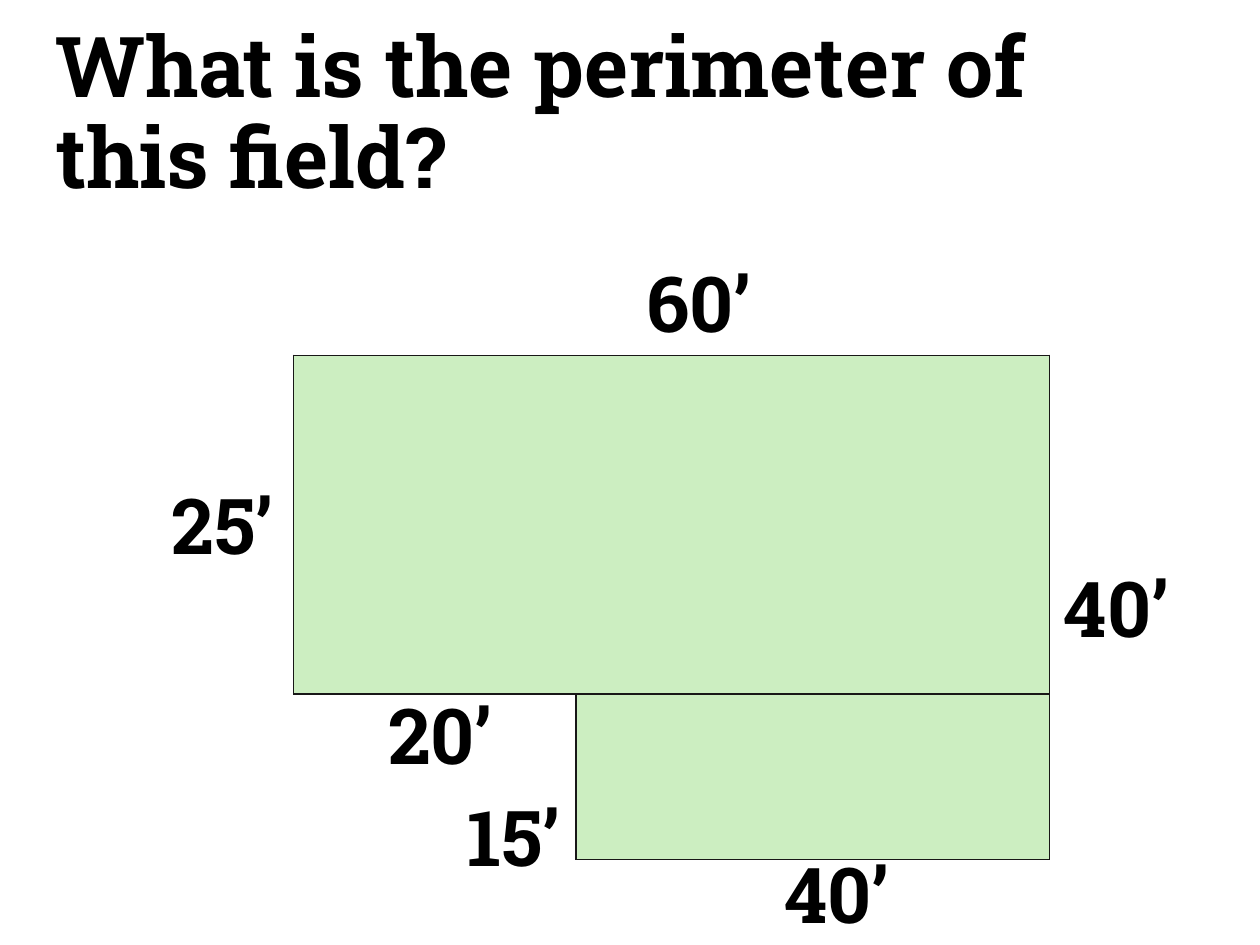
from dataclasses import dataclass

from lxml.etree import SubElement
from pptx import Presentation
from pptx.dml.color import RGBColor as RGB
from pptx.enum.text import MSO_ANCHOR as Anchor, MSO_AUTO_SIZE as AutoSize, PP_ALIGN as Align
from pptx.oxml.ns import qn
from pptx.util import Emu, Pt

PX = 9144  # 100 px to the inch
NO_GRID_STYLE = "{2D5ABB26-0587-4C30-8999-92F81FD0307C}"


@dataclass(frozen=True)
class Theme:
    font: str = "Roboto Slab"
    ink: str = "000000"
    fence: str = "181717"
    grass: str = "CCEEC1"
    title_size: int = 48
    label_size: int = 44
    fence_width: int = 1


def px(*lengths):
    return [Emu(n * PX) for n in lengths]


class FieldSlide:
    def __init__(self, prs, theme):
        self.theme = theme
        self.s = prs.slides.add_slide(prs.slide_layouts[6])

    def text(self, words, box, size, frame, para):
        tf = self.s.shapes.add_textbox(*px(*box)).text_frame
        for name, value in {"word_wrap": True, "vertical_anchor": Anchor.TOP, **frame}.items():
            setattr(tf, name, value)
        p = tf.paragraphs[0]
        for name, value in para.items():
            setattr(p, name, value)
        r = p.add_run()
        r.text = words
        for name, value in {"name": self.theme.font, "size": Pt(size), "bold": True}.items():
            setattr(r.font, name, value)
        r.font.color.rgb = RGB.from_string(self.theme.ink)

    def title(self, words, box):
        self.text(words, box, self.theme.title_size, {"auto_size": AutoSize.NONE},
                  {"alignment": Align.LEFT, "line_spacing": 0.9})

    def label(self, words, left, top, width):
        self.text(words, (left, top, width, 84), self.theme.label_size,
                  {"auto_size": AutoSize.SHAPE_TO_FIT_TEXT}, {"alignment": Align.CENTER})

    def borders(self, cell, sides):
        """Draw the fence on the given sides, any of L, R, T and B in that order."""
        tc_pr = cell._tc.get_or_add_tcPr()
        for side in sides:
            ln = SubElement(tc_pr, qn(f"a:ln{side}"), w=str(Pt(self.theme.fence_width)))
            fill = SubElement(ln, qn("a:solidFill"))
            SubElement(fill, qn("a:srgbClr"), val=self.theme.fence)

    def field(self, box, widths, heights):
        """An L-shaped field: a 2 by 2 table with its lower left cell left open."""
        table = self.s.shapes.add_table(2, 2, *px(*box)).table
        table.first_row = table.horz_banding = False
        table._tbl.tblPr.find(qn("a:tableStyleId")).text = NO_GRID_STYLE
        for column, width in zip(table.columns, px(*widths)):
            column.width = width
        for row, height in zip(table.rows, px(*heights)):
            row.height = height
        table.cell(0, 0).merge(table.cell(0, 1))
        cells = {(0, 0): ("LRT", True), (0, 1): ("RT", True),
                 (1, 0): ("RT", False), (1, 1): ("LRB", True)}
        for at, (sides, planted) in cells.items():
            cell = table.cell(*at)
            self.borders(cell, sides)
            if planted:
                cell.fill.solid()
                cell.fill.fore_color.rgb = RGB.from_string(self.theme.grass)
            else:
                cell.fill.background()


def main():
    prs = Presentation()
    prs.slide_width, prs.slide_height = px(1000, 750)
    slide = FieldSlide(prs, Theme())
    slide.field((233, 282, 600, 400), widths=(224, 376), heights=(269, 131))
    slide.title("What is the perimeter of this field?", (34, 15, 917, 120))
    for words, left, top, width in (
        ("40’", 820, 440, 132),
        ("60’", 495, 198, 120),
        ("25’", 118, 374, 117),
        ("15’", 350, 622, 116),
        ("40’", 583, 667, 163),
        ("20’", 291, 541, 117),
    ):
        slide.label(words, left, top, width)
    prs.save("out.pptx")


if __name__ == "__main__":
    main()
